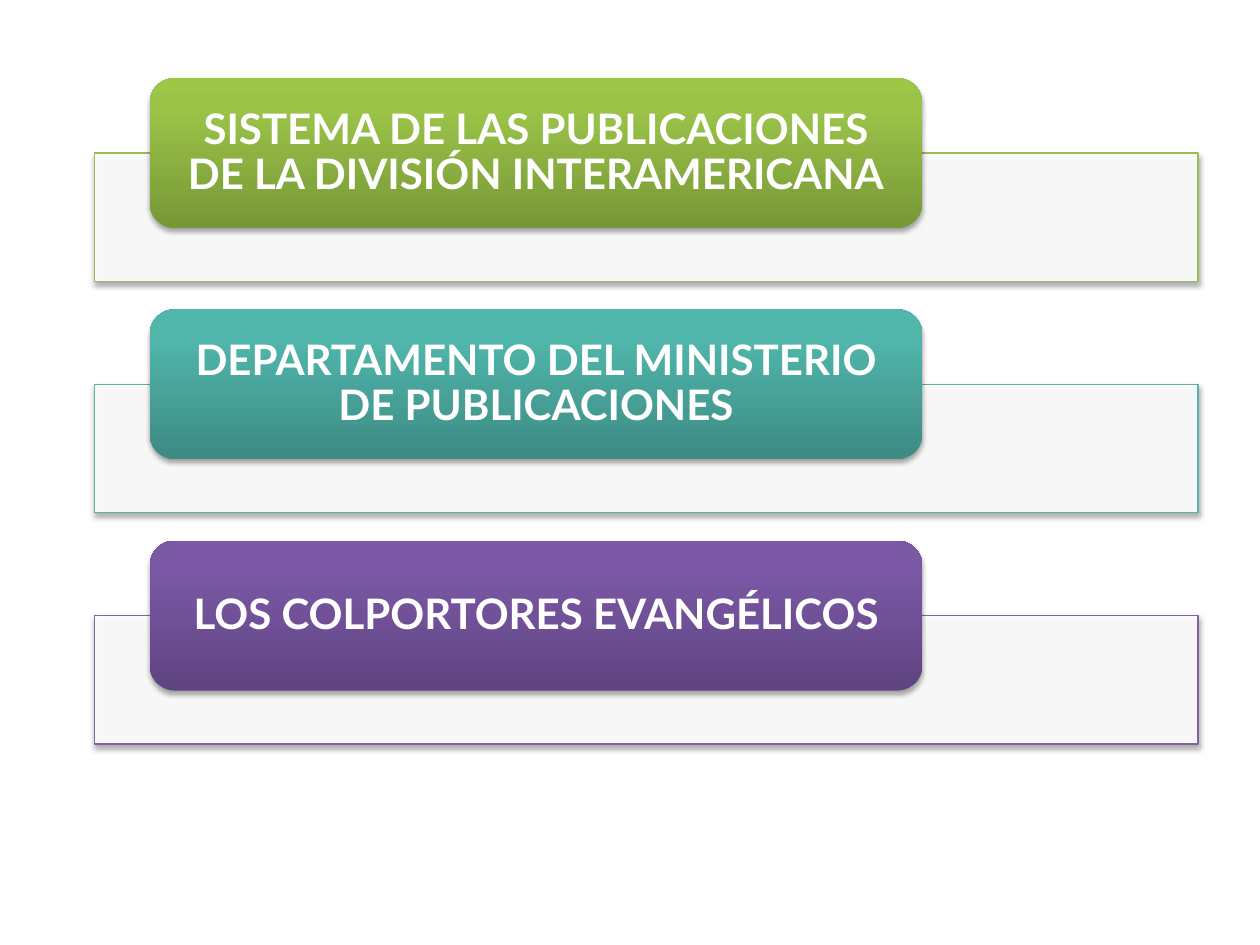
from lxml.etree import SubElement
from pptx import Presentation
from pptx.dml.color import RGBColor
from pptx.enum.shapes import MSO_SHAPE as Shape
from pptx.enum.text import MSO_ANCHOR as Anchor, PP_ALIGN as Align
from pptx.oxml.ns import qn
from pptx.util import Inches, Pt

LEVELS = [
    ("SISTEMA DE LAS PUBLICACIONES DE LA DIVISIÓN INTERAMERICANA",
     "9BBB59", ("779737", "9BC348", "9DC746")),
    ("DEPARTAMENTO DEL MINISTERIO DE PUBLICACIONES",
     "5EAFA6", ("3D8B83", "50B5AA", "4EB8AC")),
    ("LOS COLPORTORES EVANGÉLICOS",
     "8064A2", ("5F4480", "7B58A6", "7C57A8")),
]
STOPS = (0, 80, 100)
BAR_LEFT, BAR_WIDTH, BAR_HEIGHT = 0.75, 8.76, 1.02
LABEL_WIDTH, LABEL_HEIGHT = BAR_WIDTH * 0.7, 1.19
LABEL_LEFT = BAR_LEFT + BAR_WIDTH * 0.05
TOP, PITCH = 0.62, 1.835


def rgb(value):
    return RGBColor.from_string(value)


def add_color(parent, value, alpha=None):
    color = SubElement(parent, qn("a:srgbClr"), val=value)
    if alpha:
        SubElement(color, qn("a:alpha"), val=str(alpha * 1000))


def add_block(slide, kind, left, top, width, height):
    block = slide.shapes.add_shape(
        kind, Inches(left), Inches(top), Inches(width), Inches(height))
    block.shadow.inherit = False
    effects = block._element.spPr.find(qn("a:effectLst"))
    shadow = SubElement(effects, qn("a:outerShdw"), blurRad=str(Pt(3.1)),
                        dist=str(Pt(1.8)), dir="5400000", rotWithShape="0")
    add_color(shadow, "000000", 35)
    return block


def add_bar(slide, top, outline):
    bar = add_block(slide, Shape.RECTANGLE, BAR_LEFT, top, BAR_WIDTH, BAR_HEIGHT)
    bar.fill.solid()
    bar.fill.fore_color.rgb = rgb("FFFFFF")
    white = bar._element.spPr.find(qn("a:solidFill"))[0]
    SubElement(white, qn("a:alpha"), val="90000")
    bar.line.color.rgb = rgb(outline)
    bar.line.width = Pt(0.75)


def add_label(slide, top, wording, shades):
    label = add_block(slide, Shape.ROUNDED_RECTANGLE,
                      LABEL_LEFT, top, LABEL_WIDTH, LABEL_HEIGHT)
    label.line.fill.background()
    label.fill.gradient()
    label.fill.gradient_angle = 90
    stops = label._element.spPr.find(qn("a:gradFill")).find(qn("a:gsLst"))
    stops.clear()
    for position, shade in zip(STOPS, shades):
        add_color(SubElement(stops, qn("a:gs"), pos=str(position * 1000)), shade)

    frame = label.text_frame
    frame.word_wrap = True
    frame.vertical_anchor = Anchor.MIDDLE
    frame.margin_left = frame.margin_right = Inches(0.23)
    frame.margin_top = frame.margin_bottom = 0
    paragraph = frame.paragraphs[0]
    paragraph.text = wording
    paragraph.alignment = Align.CENTER
    paragraph.line_spacing = 0.9
    font = paragraph.font
    font.name, font.size, font.bold = "Lato", Pt(24), True
    font.color.rgb = rgb("FFFFFF")


def main():
    deck = Presentation()
    deck.slide_width, deck.slide_height = Inches(10), Inches(7.5)
    slide = deck.slides.add_slide(deck.slide_layouts[6])
    for row, (wording, outline, shades) in enumerate(LEVELS):
        top = TOP + row * PITCH
        add_bar(slide, top + LABEL_HEIGHT / 2, outline)
        add_label(slide, top, wording, shades)
    deck.save("out.pptx")


if __name__ == "__main__":
    main()
